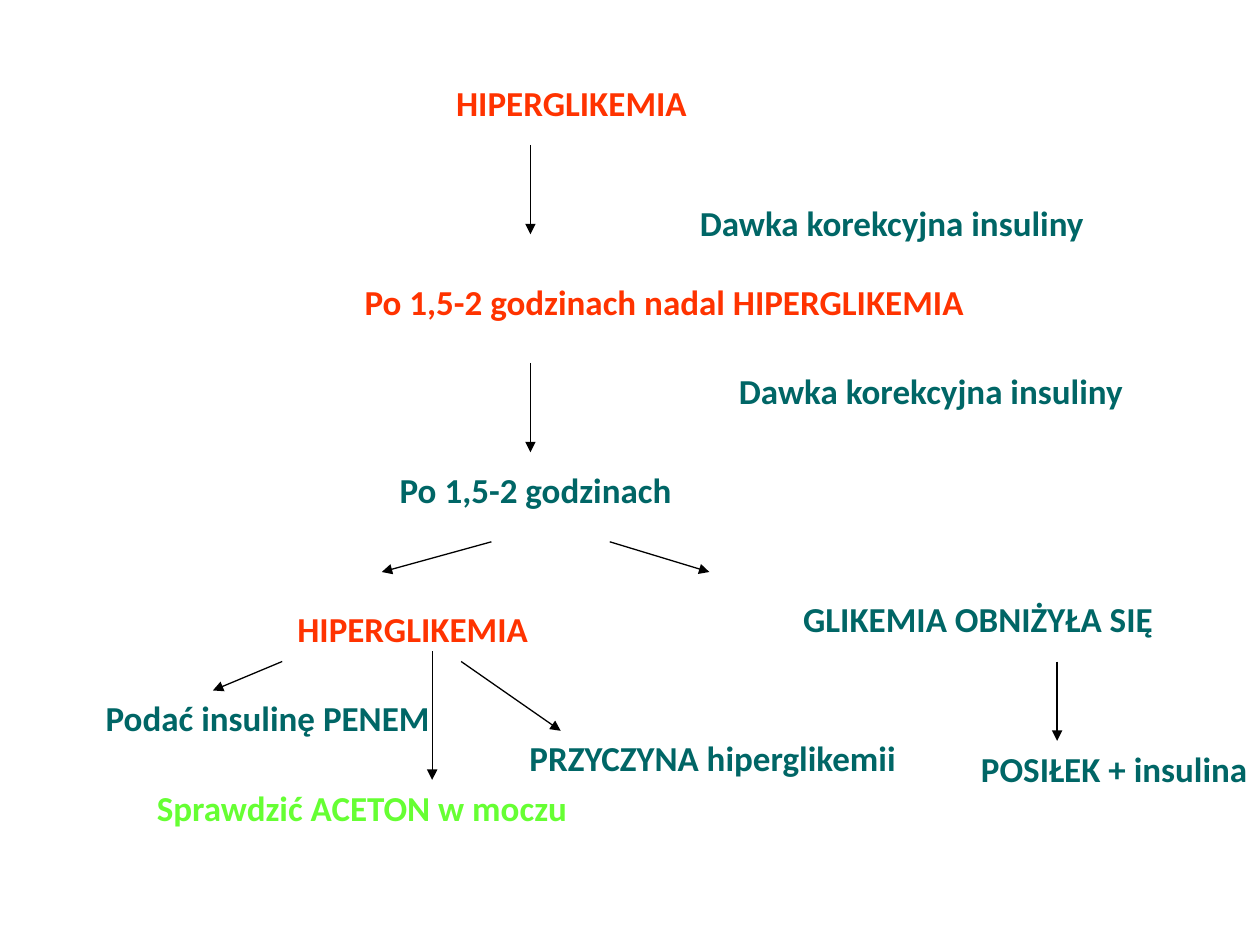
import pptx
import pptx.dml.color
import pptx.enum.shapes
import pptx.enum.text
import pptx.util
import lxml.etree

# Grid of 100 columns by 75 rows; positions are relative to a region's (column, row)
COLUMNS, ROWS = 100, 75
SLIDE_WIDTH, SLIDE_HEIGHT = pptx.util.Inches(10), pptx.util.Inches(7.5)
LABEL_ROWS = 4.3
RED, TEAL, GREEN, BLACK = "FF3300", "006666", "66FF33", "000000"
LABEL_FONT = {"name": "Calibri", "size": pptx.util.Pt(20), "bold": True}
LABEL_FRAME = {"word_wrap": True, "auto_size": pptx.enum.text.MSO_AUTO_SIZE.NONE}


def color(value):
    return pptx.dml.color.RGBColor.from_string(value)


def across(columns):
    return round(SLIDE_WIDTH * columns / COLUMNS)


def down(rows):
    return round(SLIDE_HEIGHT * rows / ROWS)


def set_values(target, values):
    for name, value in values.items():
        setattr(target, name, value)


def add_label(slide, box, text, column, row, width, text_color):
    """Right-aligned bold text."""
    shape = slide.shapes.add_textbox(across(box[0] + column), down(box[1] + row),
                                     across(width), down(LABEL_ROWS))
    set_values(shape.text_frame, LABEL_FRAME)
    paragraph = shape.text_frame.paragraphs[0]
    paragraph.alignment = pptx.enum.text.PP_ALIGN.RIGHT
    run = paragraph.add_run()
    run.text = text
    set_values(run.font, LABEL_FONT)
    run.font.color.rgb = color(text_color)


def add_arrow(slide, box, start_column, start_row, end_column, end_row):
    """Thin straight line with a triangle at its end."""
    arrow = slide.shapes.add_connector(
        pptx.enum.shapes.MSO_CONNECTOR.STRAIGHT,
        across(box[0] + start_column), down(box[1] + start_row),
        across(box[0] + end_column), down(box[1] + end_row))
    arrow.line.width = pptx.util.Pt(0.75)
    arrow.line.color.rgb = color(BLACK)
    properties = arrow.element.spPr
    tag = pptx.oxml.ns.qn
    lxml.etree.SubElement(arrow.line._get_or_add_ln(), tag("a:tailEnd"), type="triangle")
    lxml.etree.SubElement(properties, tag("a:effectLst"))


def add_parts(slide, box, labels, arrows):
    for label in labels:
        add_label(slide, box, *label)
    for arrow in arrows:
        add_arrow(slide, box, *arrow)


def add_correction_steps(slide, box):
    stem, stem_length = 27.1, 7.1
    labels = [
        ("HIPERGLIKEMIA", 15.3, 1, 25.2, RED),
        ("Dawka korekcyjna insuliny", 32.6, 10.5, 39.4, TEAL),
        ("Po 1,5-2 godzinach nadal HIPERGLIKEMIA", 0.3, 16.8, 62.2, RED),
        ("Dawka korekcyjna insuliny", 33.4, 23.8, 41.7, TEAL),
        ("Po 1,5-2 godzinach", 13, 31.7, 26.3, TEAL),
    ]
    arrows = [(stem, row, stem, row + stem_length) for row in (6.5, 23.8)]
    add_parts(slide, box, labels, arrows)


def add_still_high_branch(slide, box):
    labels = [
        ("HIPERGLIKEMIA", 16.1, 4.7, 26.8, RED),
        ("Podać insulinę PENEM", 2, 11.8, 33.1, TEAL),
        ("Sprawdzić ACETON w moczu", 5.1, 18.9, 40.9, GREEN),
        ("PRZYCZYNA hiperglikemii", 33.5, 15, 38.6, TEAL),
    ]
    arrows = [
        (39, 0, 30.3, 2.4),
        (22.4, 9.5, 16.9, 11.8),
        (34.3, 8.7, 34.3, 18.9),
        (36.6, 9.5, 44.5, 15),
    ]
    add_parts(slide, box, labels, arrows)


def add_lowered_branch(slide, box):
    labels = [
        ("GLIKEMIA OBNIŻYŁA SIĘ", 5.1, 3.9, 39.4, TEAL),
        ("POSIŁEK + insulina", 22.9, 15.8, 29.1, TEAL),
    ]
    arrows = [(0.4, 0, 8.3, 2.4), (35.9, 9.5, 35.9, 15.8)]
    add_parts(slide, box, labels, arrows)


def main():
    presentation = pptx.Presentation()
    set_values(presentation, {"slide_width": SLIDE_WIDTH, "slide_height": SLIDE_HEIGHT})
    slide = presentation.slides.add_slide(presentation.slide_layouts[6])
    # Each region starts at its (column, row)
    add_correction_steps(slide, (15, 5))
    add_still_high_branch(slide, (0, 43))
    add_lowered_branch(slide, (48, 43))
    presentation.save("out.pptx")


if __name__ == "__main__":
    main()
